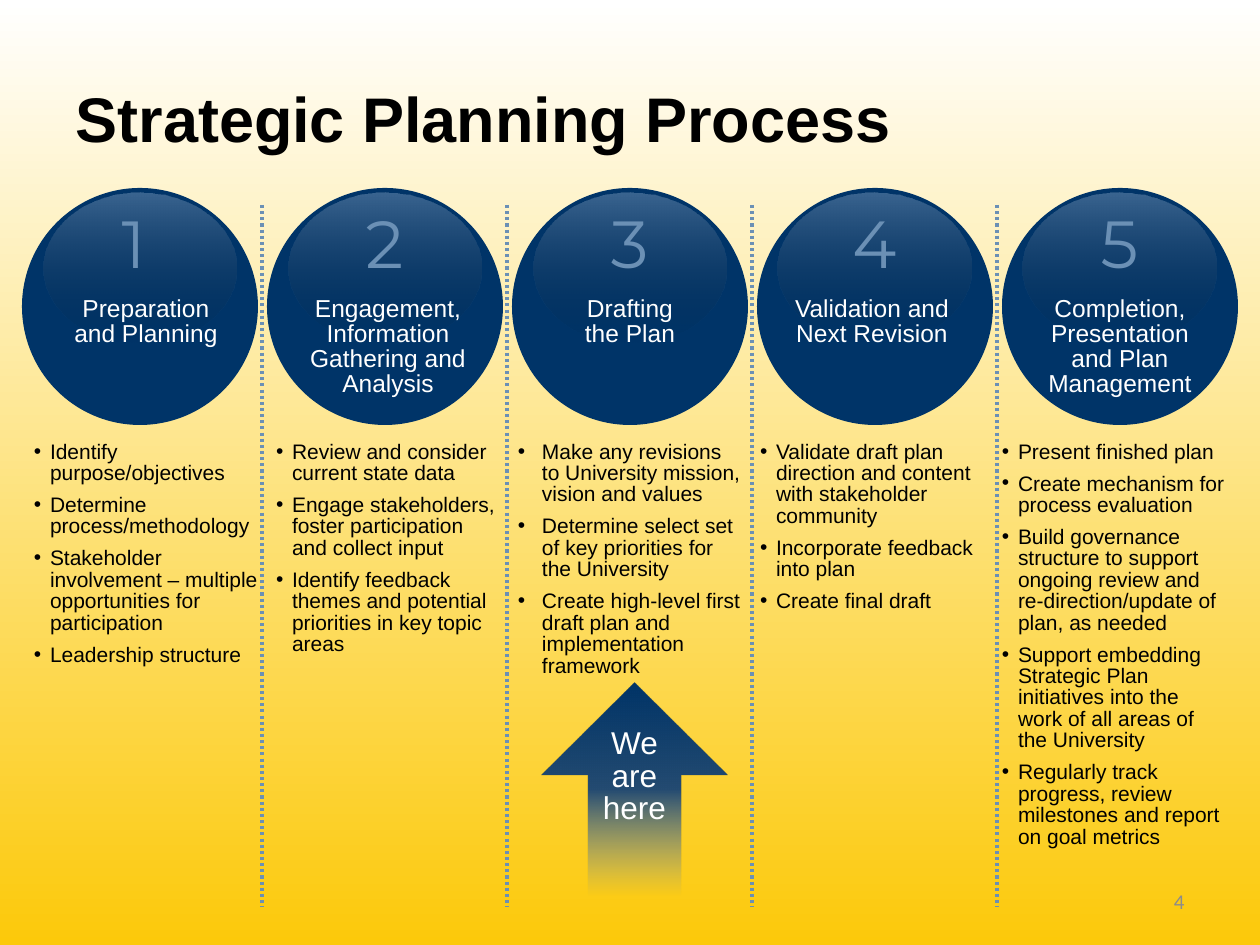
from collections import namedtuple

from lxml import etree
from pptx import Presentation
from pptx.dml.color import RGBColor
from pptx.enum.dml import MSO_LINE
from pptx.enum.shapes import MSO_CONNECTOR, MSO_SHAPE
from pptx.enum.text import MSO_ANCHOR, MSO_AUTO_SIZE, PP_ALIGN
from pptx.oxml.ns import qn
from pptx.util import Emu, Pt

PX_PER_INCH = 126
LEFT, CENTER, RIGHT = PP_ALIGN.LEFT, PP_ALIGN.CENTER, PP_ALIGN.RIGHT
TOP, MIDDLE = MSO_ANCHOR.TOP, MSO_ANCHOR.MIDDLE
OVAL, UP_ARROW = MSO_SHAPE.OVAL, MSO_SHAPE.UP_ARROW
STRAIGHT, DOTTED = MSO_CONNECTOR.STRAIGHT, MSO_LINE.ROUND_DOT
FIT_SHAPE = MSO_AUTO_SIZE.SHAPE_TO_FIT_TEXT

NAVY, STEEL, GOLD = "003468", "6B90B5", "FCC90A"
WHITE, BLACK, GRAY = "FFFFFF", "000000", "8C8C8C"
STAGE_PITCH, LIST_PITCH = 245, 242

Stage = namedtuple("Stage", "name label_shift numeral_shift list_height indent tasks")
STAGES = [
    Stage("Preparation\nand Planning", 6, -6, 242, 16, [
        "Identify purpose/objectives",
        "Determine process/methodology",
        "Stakeholder involvement – multiple opportunities for participation",
        "Leadership structure"]),
    Stage("Engagement, Information Gathering and Analysis", 3, 0, 171, 16, [
        "Review and consider current state data",
        "Engage stakeholders, foster participation and collect input",
        "Identify feedback themes and potential priorities in key topic areas"]),
    Stage("Drafting\nthe Plan", 0, 0, 335, 24, [
        "Make any revisions to University mission, vision and values",
        "Determine select set of key priorities for the University",
        "Create high-level first draft plan and implementation framework"]),
    Stage("Validation and\nNext Revision", -3, 0, 195, 16, [
        "Validate draft plan direction and content with stakeholder community",
        "Incorporate feedback into plan",
        "Create final draft"]),
    Stage("Completion, Presentation\nand Plan Management", 0, 0, 440, 16, [
        "Present finished plan",
        "Create mechanism for process evaluation",
        "Build governance structure to support ongoing review and "
        "re-direction/update of plan, as needed",
        "Support embedding Strategic Plan initiatives into the work of all "
        "areas of the University",
        "Regularly track progress, review milestones and report on goal metrics"]),
]


def px(length):
    return Emu(round(length * 914400 / PX_PER_INCH))


def color(hex_code):
    return RGBColor.from_string(hex_code)


def fill_gradient(fill, owner, stops):
    """Fill top to bottom with (position, colour, opacity) stops in percent."""
    fill.gradient()
    fill.gradient_angle = 270
    stop_list = owner.find(".//" + qn("a:gsLst"))
    for default_stop in list(stop_list):
        stop_list.remove(default_stop)
    for position, hex_code, opacity in stops:
        stop = etree.SubElement(stop_list, qn("a:gs"), pos=str(position * 1000))
        tint = etree.SubElement(stop, qn("a:srgbClr"), val=hex_code)
        if opacity < 100:
            etree.SubElement(tint, qn("a:alpha"), val=str(opacity * 1000))


def add_bullet(paragraph, indent):
    properties = paragraph._p.get_or_add_pPr()
    properties.set("marL", str(px(indent)))
    properties.set("indent", str(-px(indent)))
    etree.SubElement(properties, qn("a:buFont"), typeface="Arial")
    etree.SubElement(properties, qn("a:buChar"), char="•")


def write(frame, lines, size, hex_code, font="Arial", align=LEFT, anchor=TOP,
          spacing=None, bold=False, inset=None, wrap=True, indent=0):
    frame.word_wrap = wrap
    frame.vertical_anchor = anchor
    if inset is not None:
        frame.margin_left = frame.margin_right = px(inset)
        frame.margin_top = frame.margin_bottom = px(inset)
    for number, line in enumerate(lines):
        paragraph = frame.add_paragraph() if number else frame.paragraphs[0]
        paragraph.text = line
        paragraph.alignment = align
        if spacing:
            paragraph.line_spacing = spacing
        if indent:
            paragraph.space_before = Pt(6)
            add_bullet(paragraph, indent)
        paragraph.font.name = font
        paragraph.font.size = Pt(size)
        paragraph.font.bold = bold
        paragraph.font.color.rgb = color(hex_code)


def add_text(slide, box, lines, size, hex_code, **style):
    frame = slide.shapes.add_textbox(*map(px, box)).text_frame
    write(frame, lines, size, hex_code, **style)
    return frame


def add_plain_shape(slide, kind, box):
    shape = slide.shapes.add_shape(kind, *map(px, box))
    shape.shadow.inherit = False
    shape.line.fill.background()
    return shape


def add_title(slide, box):
    title = slide.shapes.title
    title.left, title.top, title.width, title.height = map(px, box)
    write(title.text_frame, ["Strategic Planning Process"], 36, BLACK,
          anchor=MIDDLE, bold=True)


def add_stage_circle(slide, box, number, stage):
    left, top, width, height = box
    disc = add_plain_shape(slide, OVAL, box)
    disc.fill.solid()
    disc.fill.fore_color.rgb = color(NAVY)
    gloss = add_plain_shape(slide, OVAL, (left + 21, top + 5, width - 43, 151))
    fill_gradient(gloss.fill, gloss._element, [(0, "C6D9F1", 30), (100, BLACK, 0)])
    add_text(slide, (left + stage.label_shift, top + 103, width, 135),
             [stage.name], 14, WHITE, align=CENTER, spacing=0.85)
    numeral_left = left + (width - 55) // 2 + stage.numeral_shift
    numeral = add_text(slide, (numeral_left, top + 17, 55, 73), [str(number)], 38,
                       STEEL, font="Montserrat", align=CENTER, anchor=MIDDLE,
                       inset=0, wrap=False)
    numeral.auto_size = FIT_SHAPE


def add_dividers(slide, left, top, height):
    dividers = slide.shapes.add_group_shape().shapes
    for gap in range(len(STAGES) - 1):
        x = px(left + gap * STAGE_PITCH)
        divider = dividers.add_connector(STRAIGHT, x, px(top), x, px(top + height))
        divider.line.color.rgb = color(STEEL)
        divider.line.width = Pt(1.75)
        divider.line.dash_style = DOTTED
        etree.SubElement(divider._element.spPr, qn("a:effectLst"))


def add_position_arrow(slide, box):
    arrow = add_plain_shape(slide, UP_ARROW, box)
    fill_gradient(arrow.fill, arrow._element,
                  [(0, NAVY, 100), (50, "244B72", 100), (100, STEEL, 0)])
    write(arrow.text_frame, ["We", "are", "here"], 18, WHITE, align=CENTER,
          spacing=0.85, inset=0, wrap=False)


def main():
    deck = Presentation()
    deck.slide_width, deck.slide_height = px(1260), px(945)
    slide = deck.slides.add_slide(deck.slide_layouts[5])
    fill_gradient(slide.background.fill, slide.element,
                  [(0, WHITE, 100), (100, GOLD, 100)])
    add_title(slide, (63, 38, 1134, 158))
    add_text(slide, (903, 876, 294, 50), ["4"], 12, GRAY, font="Calibri",
             align=RIGHT, anchor=MIDDLE)
    for index, stage in enumerate(STAGES):
        add_text(slide, (28 + index * LIST_PITCH, 436, 236, stage.list_height),
                 stage.tasks, 12, BLACK, spacing=0.85, inset=6,
                 indent=stage.indent)
        add_stage_circle(slide, (22 + index * STAGE_PITCH, 188, 236, 237),
                         index + 1, stage)
    add_dividers(slide, 262, 205, 702)
    add_position_arrow(slide, (542, 683, 185, 213))
    deck.save("out.pptx")


if __name__ == "__main__":
    main()
